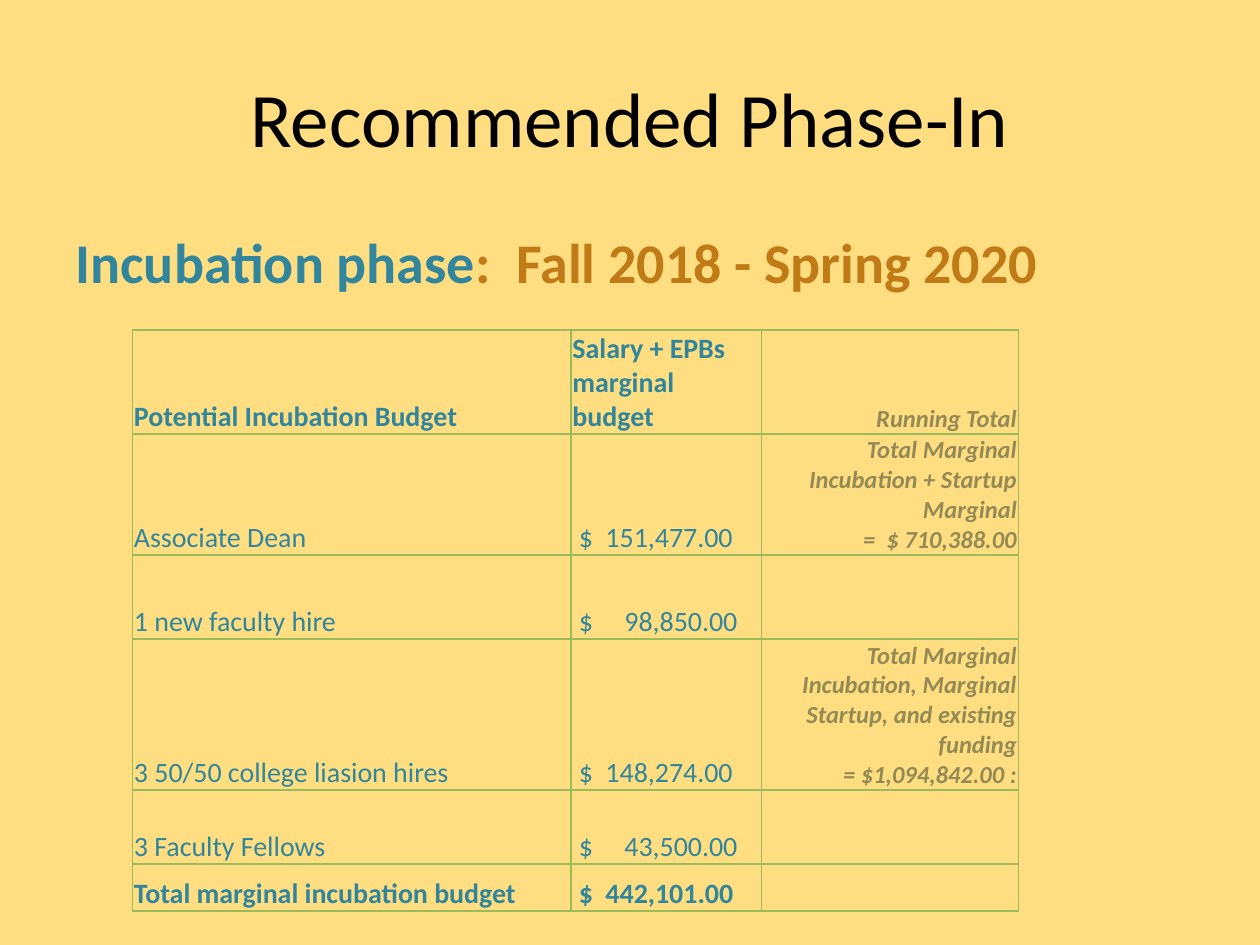
from dataclasses import dataclass

from lxml.etree import SubElement
from pptx import Presentation
from pptx.dml.color import RGBColor as Color
from pptx.enum.text import MSO_ANCHOR as Anchor, PP_ALIGN as Align
from pptx.oxml import parse_xml
from pptx.oxml.ns import nsdecls, qn
from pptx.util import Cm, Pt


@dataclass(frozen=True)
class Theme:
    font: str = "Calibri"
    background: str = "FFDD81"
    title: str = "000000"
    teal: str = "31859C"
    orange: str = "C07A16"
    olive: str = "948A54"
    border: str = "9BBB59"
    title_size: int = 44
    body_size: int = 32
    cell_size: int = 16
    note_size: int = 14
    border_width: int = 1


class SlideBuilder:
    def __init__(self, slide, theme):
        self.slide = slide
        self.theme = theme
        fill = slide.background.fill
        fill.solid()
        fill.fore_color.rgb = Color.from_string(theme.background)

    def apply(self, target, values):
        for name, value in values.items():
            setattr(target, name, value)

    def place(self, shape, left, top, width, height):
        self.apply(shape, {"left": Cm(left), "top": Cm(top),
                           "width": Cm(width), "height": Cm(height)})

    def run(self, paragraph, text, size, color, bold=False, italic=False):
        run = paragraph.add_run()
        run.text = text
        self.apply(run.font, {"name": self.theme.font, "size": Pt(size),
                              "bold": bold, "italic": italic})
        run.font.color.rgb = Color.from_string(color)

    def title(self, text, box):
        shape = self.slide.shapes.title
        self.place(shape, *box)
        shape.text_frame.vertical_anchor = Anchor.MIDDLE
        paragraph = shape.text_frame.paragraphs[0]
        paragraph.alignment = Align.CENTER
        self.run(paragraph, text, self.theme.title_size, self.theme.title)

    def body(self, parts, box):
        shape = self.slide.placeholders[1]
        self.place(shape, *box)
        paragraph = shape.text_frame.paragraphs[0]
        properties = paragraph._p.get_or_add_pPr()
        for name in ("marL", "indent"):
            properties.set(name, "0")
        SubElement(properties, qn("a:buNone"))
        for text, color in parts:
            self.run(paragraph, text, self.theme.body_size, color, bold=True)

    def borders(self, cell):
        properties = cell._tc.get_or_add_tcPr()
        for index, side in enumerate(("lnL", "lnR", "lnT", "lnB")):
            properties.insert(index, parse_xml(
                f'<a:{side} {nsdecls("a")} w="{Pt(self.theme.border_width)}">'
                f'<a:solidFill><a:srgbClr val="{self.theme.border}"/></a:solidFill>'
                f'</a:{side}>'))

    def cell(self, cell, text, values, alignment):
        self.apply(cell, {"vertical_anchor": Anchor.BOTTOM, "margin_left": Cm(0.03),
                          "margin_right": Cm(0.03), "margin_top": Cm(0.03),
                          "margin_bottom": 0})
        cell.fill.background()
        self.borders(cell)
        if not text:
            return
        frame = cell.text_frame
        for index, line in enumerate(text.split("\n")):
            paragraph = frame.add_paragraph() if index else frame.paragraphs[0]
            paragraph.alignment = alignment
            self.run(paragraph, line, **values)

    def table(self, rows, left, top, widths, heights):
        theme = self.theme
        table = self.slide.shapes.add_table(
            len(rows), len(widths), Cm(left), Cm(top),
            Cm(sum(widths)), Cm(sum(heights))).table
        self.apply(table, {"first_row": False, "horz_banding": False})
        for column, width in zip(table.columns, widths):
            column.width = Cm(width)
        for row, height in zip(table.rows, heights):
            row.height = Cm(height)
        note = {"size": theme.note_size, "color": theme.olive,
                "bold": True, "italic": True}
        for row_index, row in enumerate(rows):
            plain = {"size": theme.cell_size, "color": theme.teal,
                     "bold": row_index in (0, len(rows) - 1)}
            for column_index, text in enumerate(row):
                is_note = column_index == len(widths) - 1
                self.cell(table.cell(row_index, column_index), text,
                          note if is_note else plain,
                          Align.RIGHT if is_note else Align.LEFT)


BUDGET = [
    ("Potential Incubation Budget", "Salary + EPBs marginal budget", "Running Total"),
    ("Associate Dean", " $  151,477.00",
     "Total Marginal Incubation + Startup Marginal\n=  $ 710,388.00"),
    ("1 new faculty hire", " $     98,850.00", ""),
    ("3 50/50 college liasion hires", " $  148,274.00",
     "Total Marginal Incubation, Marginal Startup, and existing funding\n"
     " = $1,094,842.00 :"),
    ("3 Faculty Fellows", " $     43,500.00", ""),
    ("Total marginal incubation budget", " $  442,101.00", ""),
]


def main():
    presentation = Presentation()
    presentation.slide_width = Cm(25.4)
    presentation.slide_height = Cm(19.05)
    theme = Theme()
    slide = presentation.slides.add_slide(presentation.slide_layouts[1])
    builder = SlideBuilder(slide, theme)
    builder.title("Recommended Phase-In", (1.27, 0.76, 22.86, 3.18))
    builder.body([("Incubation phase", theme.teal),
                  (":  Fall 2018 - Spring 2020", theme.orange)],
                 (1.27, 4.45, 22.86, 12.57))
    builder.table(BUDGET, 2.67, 6.65, (8.84, 3.84, 5.18),
                  (2.08, 2.42, 1.7, 3.02, 1.5, 0.94))
    presentation.save("out.pptx")


if __name__ == "__main__":
    main()
